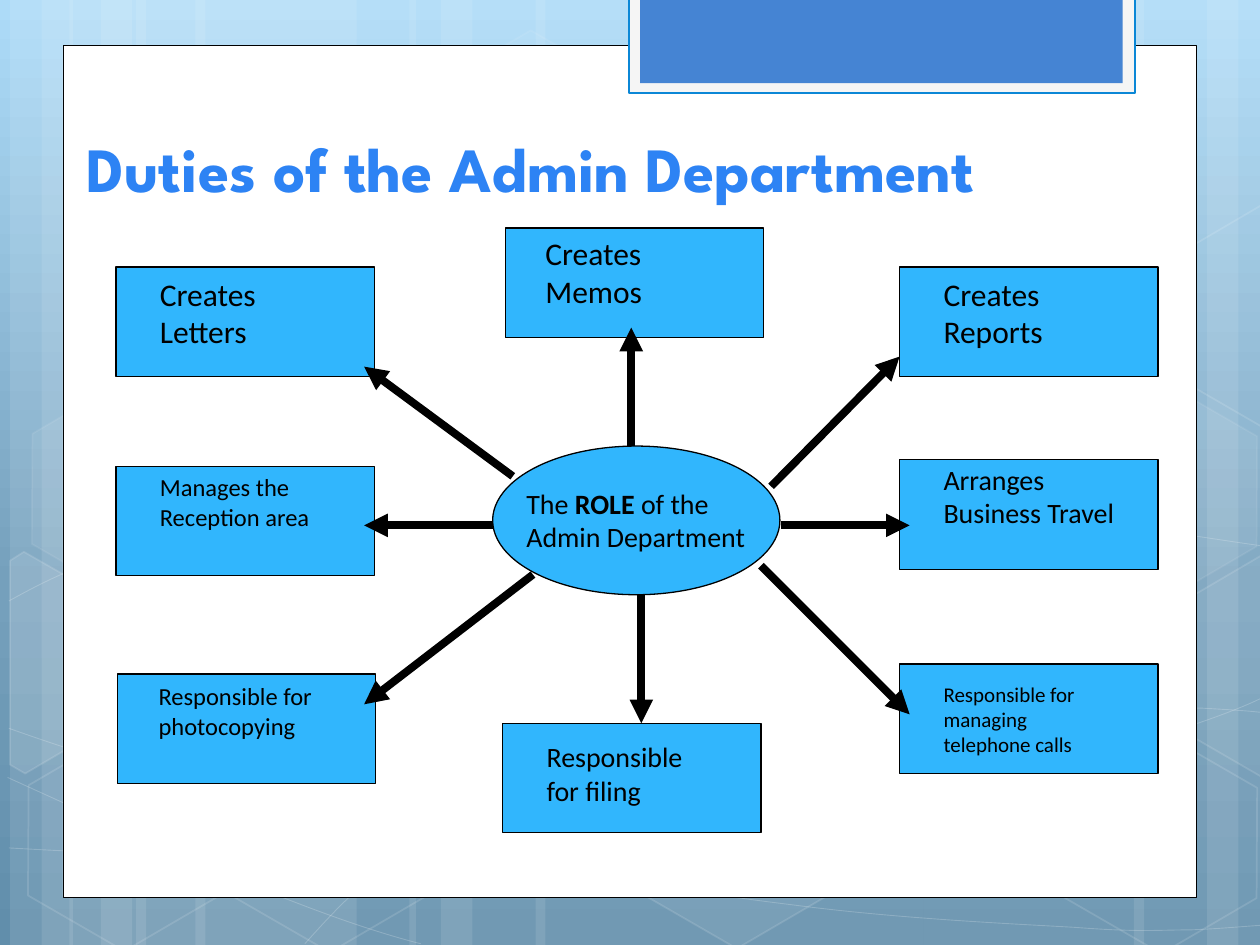
from copy import deepcopy

from pptx import Presentation
from pptx.dml.color import RGBColor
from pptx.enum import shapes, text
from pptx.oxml import ns, xmlchemy
from pptx.util import Inches, Pt

SKY = RGBColor(0xAD, 0xDB, 0xF8)
HAZE = RGBColor(0x75, 0xA0, 0xBC)
SEA = RGBColor(0x61, 0x8E, 0xAB)
WHITE = RGBColor(0xFF, 0xFF, 0xFF)
BLACK = RGBColor(0, 0, 0)
TAB_GREY = RGBColor(0xF5, 0xF5, 0xF5)
TAB_EDGE = RGBColor(0x0B, 0x87, 0xD6)
TAB_BLUE = RGBColor(0x45, 0x84, 0xD3)
TITLE_BLUE = RGBColor(0x2D, 0x83, 0xF4)
BOX_BLUE = RGBColor(0x31, 0xB6, 0xFD)

prs = Presentation()
prs.slide_width, prs.slide_height = Inches(10), Inches(7.5)
slide = prs.slides.add_slide(prs.slide_layouts[5])


def paint(shape, fill=None, edge=None, width=0.75, fill_alpha=100, edge_alpha=100):
    """Set fill and outline; None means none, alphas are percentages."""
    shape.shadow.inherit = False
    for part, color, alpha in ((shape.fill, fill, fill_alpha),
                               (shape.line.fill, edge, edge_alpha)):
        if color is None:
            part.background()
            continue
        part.solid()
        part.fore_color.rgb = color
        if alpha < 100:
            parent = shape.line._ln if part is shape.line.fill else shape._element.spPr
            rgb = parent.find(ns.qn("a:solidFill")).find(ns.qn("a:srgbClr"))
            rgb.append(xmlchemy.OxmlElement("a:alpha"))
            rgb[-1].set("val", str(alpha * 1000))
    if edge is not None:
        shape.line.width = Pt(width)


def add_label(left, top, width, height, pieces, size):
    """Add a wrapping text box; every second piece is bold."""
    frame = slide.shapes.add_textbox(*map(Inches, (left, top, width, height))).text_frame
    frame.word_wrap = True
    for i, piece in enumerate(pieces):
        run = frame.paragraphs[0].add_run()
        run.text = piece
        run.font.name, run.font.size = "Calibri", Pt(size)
        run.font.bold = i % 2 == 1
        run.font.color.rgb = BLACK


# Background gradient, with a third stop in the middle
backdrop = slide.background.fill
backdrop.gradient()
backdrop.gradient_angle = 270
stop_list = slide._element.find(".//" + ns.qn("a:gsLst"))
stop_list.insert(1, deepcopy(stop_list[0]))
for stop, color, position in zip(backdrop.gradient_stops, (SKY, HAZE, SEA), (0, 0.62, 1)):
    stop.color.rgb = color
    stop.position = position

# Translucent vertical bands
bands = [(1.08, 1.75), (0.08, 0.5), (0.33, 0.83), (1.55, 1.75), (0.55, 0.5), (0.8, 0.83),
         (7.33, 1.75), (9.58, 0.5), (9, 0.83), (4.25, 3.08), (3.25, 0.5), (3.5, 0.83)]
for left, width in bands:
    band = slide.shapes.add_shape(shapes.MSO_SHAPE.RECTANGLE, Inches(left), 0,
                                  Inches(width), Inches(7.5))
    paint(band, WHITE, fill_alpha=10)

# Thin waves: a start, then cubic curves of three points; a lone point is a straight line
waves = [
    [(0.07, 6.73), (0.61, 6.76, 1.15, 6.79, 1.9, 6.78), (2.65, 6.77, 3.58, 6.75, 4.58, 6.65),
     (5.58, 6.55, 7, 6.36, 7.92, 6.17), (8.83, 5.98, 9.77, 5.68, 10.07, 5.51)],
    [(0.07, 4.77), (0.36, 4.61, 0.65, 4.46, 1.21, 4.31), (1.78, 4.16, 2.59, 3.94, 3.47, 3.87),
     (4.36, 3.8, 5.44, 3.79, 6.54, 3.87), (7.64, 3.95, 9.47, 4.26, 10.07, 4.34)],
    [(0.06, 6.17), (1.27, 6.72, 2.47, 7.27, 3.34, 7.49)],
    [(0.07, 5.78), (0.38, 5.89, 0.7, 6, 1.28, 6.16), (1.86, 6.31, 2.73, 6.56, 3.57, 6.73),
     (4.4, 6.9, 5.45, 7.08, 6.28, 7.18), (7.11, 7.29, 8, 7.33, 8.53, 7.36),
     (9.05, 7.4, 9.19, 7.38, 9.45, 7.38), (9.71, 7.37, 9.89, 7.35, 10.07, 7.34)],
    [(2.42, 7.49), (2.6, 7.29, 2.78, 7.09, 3.02, 6.91), (3.26, 6.73, 3.6, 6.53, 3.88, 6.39),
     (4.16, 6.25, 4.33, 6.19, 4.7, 6.09), (5.06, 5.99, 5.73, 5.85, 6.08, 5.78),
     (6.44, 5.71, 6.49, 5.71, 6.8, 5.69), (7.11, 5.66, 7.6, 5.63, 7.94, 5.62),
     (8.29, 5.61, 8.86, 5.62, 8.86, 5.62), (9.53, 5.62),
     (9.71, 5.63, 9.88, 5.64, 9.97, 5.65), (10.06, 5.66, 10.03, 5.65, 10.06, 5.66)],
]
for start, *pieces in waves:
    builder = slide.shapes.build_freeform(*map(Inches, start))
    for piece in pieces:
        lengths = [Inches(value) for value in piece]
        builder.add_line_segments(list(zip(lengths[::2], lengths[1::2])), close=False)
    wave = builder.convert_to_shape()
    paint(wave, None, WHITE, 0.5, edge_alpha=20)
    # Join each three line points into one cubic curve
    segments = iter(wave._element.findall(".//" + ns.qn("a:lnTo")))
    for piece in pieces:
        joined = [next(segments) for _ in range(len(piece) // 2)]
        if len(joined) == 3:
            cubic = xmlchemy.OxmlElement("a:cubicBezTo")
            joined[0].addprevious(cubic)
            for segment in joined:
                cubic.append(segment[0])
                segment.getparent().remove(segment)

# Hexagons: left, top, fill alpha (0 for none), edge alpha
hexagons = [(3.34, 0.36, 4, 8), (4.97, 5.89, 6, 12), (0.11, 5.91, 0, 12),
            (0.14, 3.12, 7, 8), (1.74, 5.92, 0, 12), (7.53, 4.53, 10, 12),
            (8.34, 5.93, 0, 12), (8.34, 3.14, 7, 8)]
for left, top, fill_alpha, edge_alpha in hexagons:
    hexagon = slide.shapes.add_shape(shapes.MSO_SHAPE.HEXAGON, Inches(left), Inches(top),
                                     Inches(1.75), Inches(1.52))
    hexagon.adjustments[0] = 0.285
    hexagon.rotation = 30
    paint(hexagon, WHITE if fill_alpha else None, WHITE, 1, fill_alpha, edge_alpha)

# Hexagons cut off by the slide edges
cut_hexagons = [
    ([(0.08, 4.45), (0.19, 4.38), (0.96, 4.82), (0.95, 5.7), (0.2, 6.14), (0.08, 6.07)], 10),
    ([(9.26, 4.85), (10.01, 4.41), (10.09, 4.46), (10.09, 6.13), (10.02, 6.17),
      (9.26, 5.73)], 4),
    ([(9.26, 2.07), (10.01, 1.63), (10.1, 1.68), (10.09, 3.35), (10.02, 3.39),
      (9.26, 2.95)], 0),
]
for corners, fill_alpha in cut_hexagons:
    corners = [(Inches(x), Inches(y)) for x, y in corners]
    outline = slide.shapes.build_freeform(*corners[0])
    outline.add_line_segments(corners[1:], close=True)
    paint(outline.convert_to_shape(), WHITE if fill_alpha else None, WHITE, 1, fill_alpha, 12)

# White sheet and the blue tab at its top
for place, fill, edge, width in [((0.5, 0.36, 9, 6.76), WHITE, BLACK, 0.5),
                                 ((4.99, -0.02, 4.02, 0.76), TAB_GREY, TAB_EDGE, 1.25),
                                 ((5.08, -0.02, 3.83, 0.68), TAB_BLUE, None, 0)]:
    panel = slide.shapes.add_shape(shapes.MSO_SHAPE.RECTANGLE, *map(Inches, place))
    paint(panel, fill, edge, width)

# Title, brought in front of the sheet
title = slide.shapes.title
slide.shapes._spTree.append(title._element)
title.left, title.top, title.width, title.height = map(Inches, (0.59, 0.68, 8.85, 1))
title.text_frame.text = "Duties of the Admin Department"
title.text_frame.auto_size = text.MSO_AUTO_SIZE.NONE
title.text_frame.vertical_anchor = text.MSO_ANCHOR.BOTTOM
heading = title.text_frame.paragraphs[0]
heading.alignment = text.PP_ALIGN.LEFT
heading_font = heading.runs[0].font
heading_font.name, heading_font.size, heading_font.bold = "League Spartan", Pt(36), True
heading_font.color.rgb = TITLE_BLUE

# Duties: box left and top, label left, top and height, wording, size
duties = [
    (0.92, 2.12, 1.17, 2.13, 0.7, "Creates Letters", 18),
    (4.01, 1.81, 4.23, 1.81, 0.7, "Creates Memos", 18),
    (7.14, 2.12, 7.39, 2.13, 0.7, "Creates Reports", 18),
    (7.14, 3.65, 7.39, 3.62, 0.9, "Arranges Business Travel", 16),
    (0.92, 3.7, 1.17, 3.7, 0.8, "Manages the Reception area", 14),
    (0.93, 5.35, 1.16, 5.36, 0.8, "Responsible for photocopying", 14),
    (3.99, 5.74, 4.24, 5.82, 0.64, "Responsible for filing", 16),
    (7.14, 5.27, 7.39, 5.36, 0.7, "Responsible for managing telephone calls", 12),
]
for left, top, label_left, label_top, label_height, duty, size in duties:
    box = slide.shapes.add_shape(shapes.MSO_SHAPE.RECTANGLE, Inches(left), Inches(top),
                                 Inches(2.05), Inches(0.87))
    paint(box, BOX_BLUE, BLACK)
    add_label(label_left, label_top, 1.58, label_height, [duty], size)

# Role in the centre
role = slide.shapes.add_shape(shapes.MSO_SHAPE.OVAL, *map(Inches, (3.91, 3.54, 2.28, 1.18)))
paint(role, BOX_BLUE, BLACK)
add_label(4.08, 3.81, 1.97, 0.64, ["The ", "ROLE", " of the Admin Department"], 16)

# Arrows from the role to each duty
arrows = [(4.07, 3.78, 2.89, 2.91), (5.01, 3.54, 5.01, 2.6), (6.12, 3.86, 7.14, 2.83),
          (3.91, 4.17, 2.89, 4.17), (6.2, 4.17, 7.22, 4.17), (4.23, 4.56, 2.89, 5.59),
          (5.09, 4.72, 5.09, 5.74), (6.04, 4.49, 7.22, 5.67)]
for ends in arrows:
    arrow = slide.shapes.add_connector(shapes.MSO_CONNECTOR.STRAIGHT, *map(Inches, ends))
    arrow.line.color.rgb = BLACK
    arrow.line.width = Pt(4.5)
    head = xmlchemy.OxmlElement("a:tailEnd")
    head.set("type", "triangle")
    arrow.line._ln.append(head)
    arrow._element.spPr.append(xmlchemy.OxmlElement("a:effectLst"))

prs.save("out.pptx")
